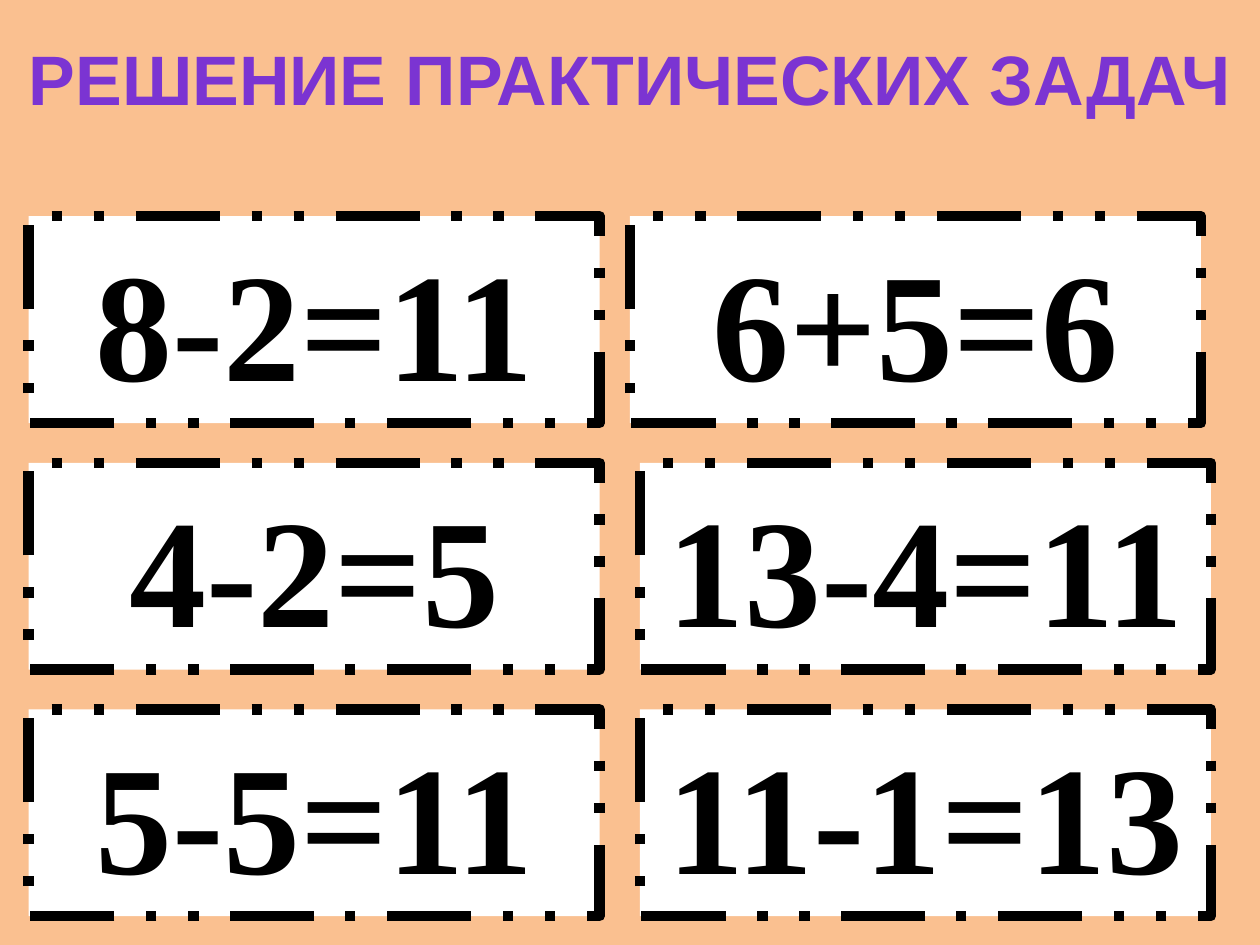
import pptx
import pptx.dml.color
import pptx.enum.dml
import pptx.enum.shapes
import pptx.enum.text
import pptx.util

Cm = pptx.util.Cm
Pt = pptx.util.Pt
TITLE = "РЕШЕНИЕ ПРАКТИЧЕСКИХ ЗАДАЧ"
ROWS = [
    (("8-2=11", 0.58), ("6+5=6", 12.7)),
    (("4-2=5", 0.58), ("13-4=11", 12.9)),
    (("5-5=11", 0.58), ("11-1=13", 12.9)),
]
TOP, PITCH, CARD_W, CARD_H = 4.36, 4.97, 11.51, 4.17
TITLE_FONT = {"name": "Arial", "size": Pt(40), "bold": True}
CARD_FONT = {"name": "Times New Roman", "size": Pt(88), "bold": True}
FRAME = {
    "word_wrap": True,
    "auto_size": pptx.enum.text.MSO_AUTO_SIZE.SHAPE_TO_FIT_TEXT,
}


def paint(color_format, value):
    color_format.rgb = pptx.dml.color.RGBColor.from_string(value)


def fill(target, value):
    target.fill.solid()
    paint(target.fill.fore_color, value)


def write(sp, text, font, color, anchor):
    tf = sp.text_frame
    for key, value in FRAME.items():
        setattr(tf, key, value)
    tf.vertical_anchor = anchor
    p = tf.paragraphs[0]
    p.alignment = pptx.enum.text.PP_ALIGN.CENTER
    r = p.add_run()
    r.text = text
    for key, value in font.items():
        setattr(r.font, key, value)
    paint(r.font.color, color)


def add_card(s, text, left, top):
    sp = s.shapes.add_shape(
        pptx.enum.shapes.MSO_SHAPE.RECTANGLE,
        Cm(left), Cm(top), Cm(CARD_W), Cm(CARD_H),
    )
    sp.shadow.inherit = False
    fill(sp, "FFFFFF")
    paint(sp.line.color, "000000")
    sp.line.width = Pt(6)
    sp.line.dash_style = pptx.enum.dml.MSO_LINE.DASH_DOT_DOT
    write(sp, text, CARD_FONT, "000000", pptx.enum.text.MSO_ANCHOR.MIDDLE)


def main():
    """Build the slide with a title and a grid of equation cards."""
    prs = pptx.Presentation()
    prs.slide_width, prs.slide_height = Cm(25.4), Cm(19.05)
    s = prs.slides.add_slide(prs.slide_layouts[5])
    fill(s.background, "FAC090")

    title = s.shapes.title
    place = {"left": 0, "top": 0.58, "width": 25.4, "height": 1.96}
    for key, value in place.items():
        setattr(title, key, Cm(value))
    write(title, TITLE, TITLE_FONT, "7B34D2", pptx.enum.text.MSO_ANCHOR.TOP)

    for i, row in enumerate(ROWS):
        for text, left in row:
            add_card(s, text, left, TOP + i * PITCH)
    prs.save("out.pptx")


if __name__ == "__main__":
    main()
